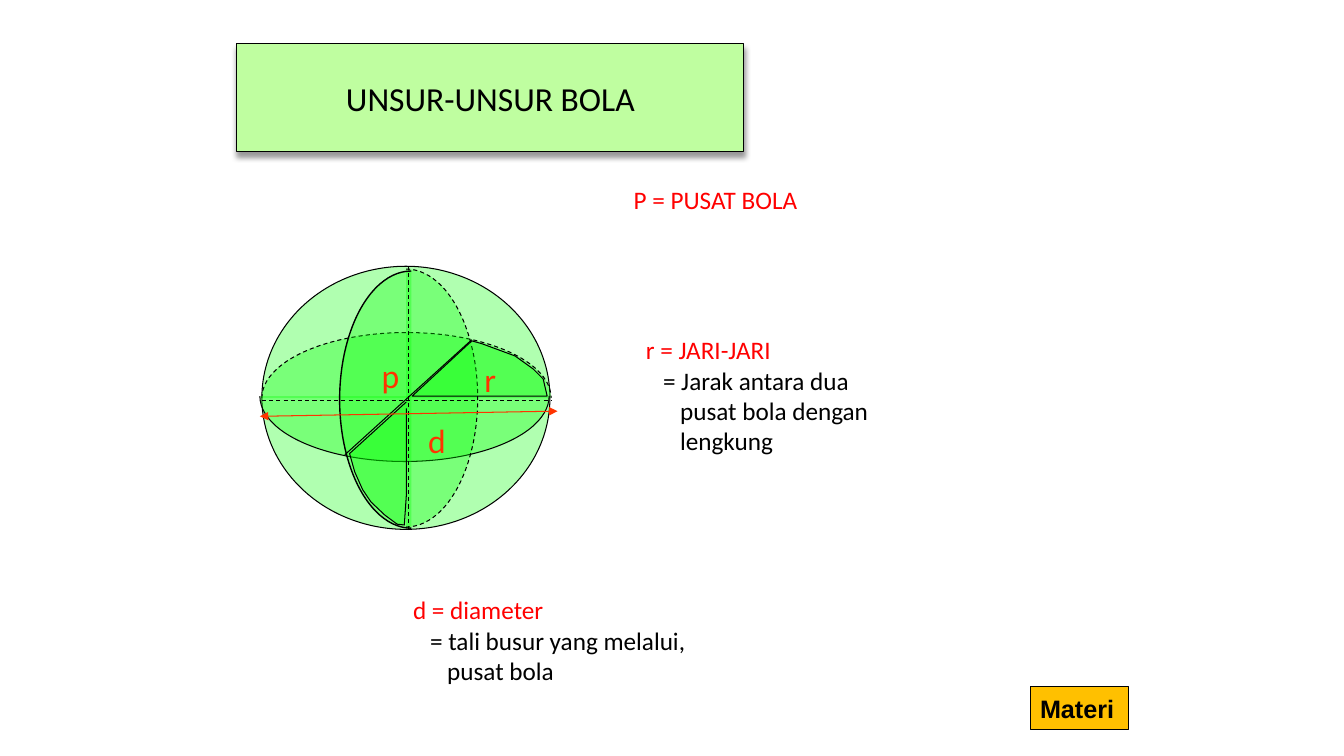
"""Build the slide on the elements of a sphere."""
from pptx import Presentation
from pptx.dml.color import RGBColor
from pptx.enum.dml import MSO_LINE
from pptx.enum.shapes import MSO_CONNECTOR, MSO_SHAPE
from pptx.enum.text import MSO_ANCHOR, MSO_AUTO_SIZE, PP_ALIGN
from pptx.oxml import parse_xml
from pptx.oxml.ns import nsdecls, qn
from pptx.util import Cm, Pt
from lxml.etree import SubElement

BLACK, RED, ORANGE, GREEN = "000000", "FF0000", "FF3300", "00FF00"
color = RGBColor.from_string


def paint(shape, fill, width=0.75, dashed=False, alpha=None):
    shape.fill.solid()
    shape.fill.fore_color.rgb = color(fill)
    if alpha:
        tint = shape.fill._xPr.find(".//" + qn("a:srgbClr"))
        SubElement(tint, qn("a:alpha"), val=str(alpha * 1000))
    shape.line.color.rgb = color(BLACK)
    shape.line.width = Pt(width)
    if dashed:
        shape.line.dash_style = MSO_LINE.DASH


def draw_line(shapes, ends, stroke, dashed=False):
    line = shapes.add_connector(MSO_CONNECTOR.STRAIGHT, *[Cm(v) for v in ends])
    line.line.color.rgb = color(stroke)
    line.line.width = Pt(0.75)
    if dashed:
        line.line.dash_style = MSO_LINE.DASH
    SubElement(line._element.spPr, qn("a:effectLst"))
    return line


deck = Presentation()
deck.slide_width, deck.slide_height = Cm(33.87), Cm(19.05)
page = deck.slides.add_slide(deck.slide_layouts[5])

title = page.shapes.title
title.left, title.top, title.width, title.height = Cm(5.97), Cm(1.09), Cm(12.78), Cm(2.74)
title_xml = title._element.spPr
title_xml.append(parse_xml(f'<a:prstGeom {nsdecls("a")} prst="ellipse"><a:avLst/></a:prstGeom>'))
paint(title, "BFFEA0")
title_xml.append(parse_xml(
    f'<a:effectLst {nsdecls("a")}><a:outerShdw blurRad="{Pt(4)}" dist="{Pt(3)}" dir="5400000" '
    'rotWithShape="0"><a:srgbClr val="000000"><a:alpha val="40000"/></a:srgbClr>'
    '</a:outerShdw></a:effectLst>'))
frame = title.text_frame
frame.text = "UNSUR-UNSUR BOLA"
frame.auto_size = MSO_AUTO_SIZE.NONE
frame.word_wrap = False
frame.vertical_anchor = MSO_ANCHOR.MIDDLE
frame.paragraphs[0].alignment = PP_ALIGN.CENTER
font = frame.paragraphs[0].runs[0].font
font.name, font.size, font.color.rgb = "Calibri", Pt(24), color(BLACK)

sphere = page.shapes.add_group_shape().shapes
ball = sphere.add_shape(MSO_SHAPE.OVAL, Cm(6.6), Cm(6.71), Cm(7.26), Cm(6.63))
ball.shadow.inherit = False
paint(ball, GREEN, alpha=31)

half_circles = [
    (6.6, 8.38, 7.29, 3.3, 180, 0, 0.75, True),
    (6.55, 8.33, 7.29, 3.3, 0, 180, 0.75, False),
    (8.43, 6.78, 3.61, 6.5, 270, 90, 0.75, True),
    (8.56, 6.83, 3.61, 6.48, 90, 270, 1, False),
]
for left, top, width, height, start, end, weight, dashed in half_circles:
    arc = sphere.add_shape(MSO_SHAPE.ARC, Cm(left), Cm(top), Cm(width), Cm(height))
    arc.adjustments[0], arc.adjustments[1] = start * 0.6, end * 0.6
    arc.shadow.inherit = False
    paint(arc, GREEN, weight, dashed, alpha=31)

for ends, dashed in [
    ((10.29, 13.36, 10.29, 6.73), True),
    ((6.6, 10.08, 13.89, 10.08), True),
    ((8.69, 11.46, 11.89, 8.56), False),
]:
    draw_line(sphere, ends, BLACK, dashed)

right_sector = [(10.39, 9.98), (13.79, 9.98), (13.69, 9.55), (13.44, 9.3),
                (12.98, 8.97), (12.14, 8.66), (11.89, 8.59)]
lower_sector = [(10.24, 10.13), (8.81, 11.43), (8.94, 11.89), (9.14, 12.34),
                (9.35, 12.65), (9.7, 12.98), (10.01, 13.21), (10.19, 13.23),
                (10.24, 12.5), (10.24, 11.3), (10.24, 10.29)]
for points, closed in [(right_sector, True), (lower_sector, False)]:
    corners = [(Cm(x), Cm(y)) for x, y in points]
    outline = sphere.build_freeform(*corners[0])
    outline.add_line_segments(corners[1:], close=closed)
    sector = outline.convert_to_shape()
    sector.shadow.inherit = False
    paint(sector, GREEN, alpha=31)

diameter = draw_line(page.shapes, (6.55, 10.49, 14.05, 10.36), ORANGE)
for tag in ("a:headEnd", "a:tailEnd"):
    SubElement(diameter.line._get_or_add_ln(), qn(tag), type="triangle")

texts = [
    (11.96, 8.92, 2.51, 1.27, 24, ORANGE, [("r", 0)]),
    (10.54, 10.46, 1.63, 1.27, 24, ORANGE, [("d", 0)]),
    (9.37, 8.81, 1.09, 1.27, 24, ORANGE, [("p", 0)]),
    (15.72, 4.52, 12.14, 1.03, 18, RED, [("P = PUSAT BOLA", 0)]),
    (10.16, 14.86, 12.7, 2.57, 18, RED,
     [("d = diameter", 0), ("= tali busur yang melalui,", 1), ("pusat bola", 2)]),
    (16.03, 8.31, 12.7, 3.33, 18, RED,
     [("r = JARI-JARI", 0), ("= Jarak antara dua", 1),
      ("pusat bola dengan", 2), ("lengkung", 2)]),
]
for left, top, width, height, size, lead_color, lines in texts:
    box = page.shapes.add_textbox(Cm(left), Cm(top), Cm(width), Cm(height))
    frame = box.text_frame
    frame.word_wrap = True
    frame.text = "\n".join(words for words, step in lines)
    for para, (words, step) in zip(frame.paragraphs, lines):
        para._p.get_or_add_pPr().set("marL", str(Cm(0.43 * step)))
        font = para.runs[0].font
        font.name, font.size = "Calibri", Pt(size)
        font.color.rgb = color(BLACK if step else lead_color)

button = page.shapes.add_shape(MSO_SHAPE.RECTANGLE, Cm(25.96), Cm(17.3), Cm(2.49), Cm(1.09))
button.shadow.inherit = False
paint(button, "FFC000")
button.text_frame.text = "Materi"
button.text_frame.word_wrap = False
para = button.text_frame.paragraphs[0]
para.alignment = PP_ALIGN.LEFT
font = para.runs[0].font
font.name, font.size, font.bold, font.color.rgb = "Arial", Pt(18), True, color(BLACK)

deck.save("out.pptx")
